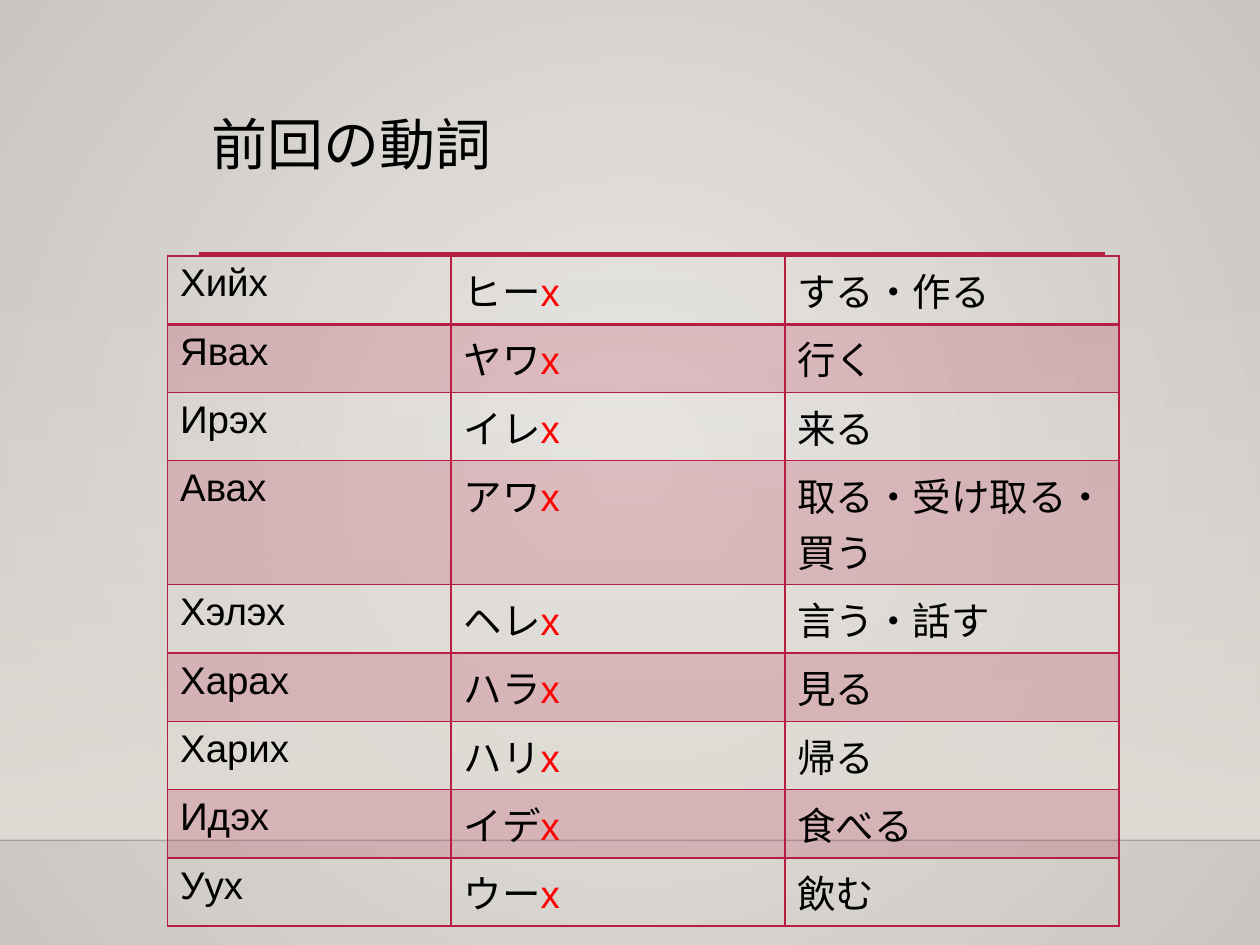
import pptx
import pptx.dml.color
import pptx.enum.shapes
import pptx.enum.text
import pptx.oxml
import pptx.oxml.ns
import pptx.util
from pptx.util import Inches

COLORS = {
    "center": "EBE9E6",
    "edge": "C9C5C0",
    "wall": "DFDBD5",
    "floor": "000001",
    "accent": "B71E42",
    "text": "000000",
    "ending": "FF0000",
}
NS = pptx.oxml.ns.nsdecls("a")


def rgb(name):
    return pptx.dml.color.RGBColor.from_string(COLORS[name])


def write(text, paragraph, font="Arial", size=22, color="text"):
    run = paragraph.add_run()
    run.text = text
    run.font.name = font
    run.font.size = pptx.util.Pt(size)
    run.font.color.rgb = rgb(color)


deck = pptx.Presentation()
deck.slide_width, deck.slide_height = Inches(10), Inches(7.5)
slide = deck.slides.add_slide(deck.slide_layouts[5])

backdrop = slide.background.fill
backdrop.gradient()
for stop, color in zip(backdrop.gradient_stops, ("center", "edge")):
    stop.color.rgb = rgb(color)
gradient = slide.background._cSld.find(".//" + pptx.oxml.ns.qn("a:gradFill"))
gradient.replace(
    gradient.find(pptx.oxml.ns.qn("a:lin")),
    pptx.oxml.parse_xml(
        f'<a:path {NS} path="circle">'
        '<a:fillToRect l="50000" t="50000" r="50000" b="50000"/></a:path>'
    ),
)

wall = slide.shapes.add_shape(
    pptx.enum.shapes.MSO_SHAPE.RECTANGLE, 0, Inches(2.2), Inches(10), Inches(4.46)
)
wall.shadow.inherit = False
wall.line.fill.background()
wall.fill.gradient()
wall.fill.gradient_angle = 270
for stop, alpha in zip(wall.fill.gradient_stops, (0, 100000)):
    stop.color.rgb = rgb("wall")
wall_colors = list(wall._element.spPr.iter(pptx.oxml.ns.qn("a:srgbClr")))
wall_colors[0].append(pptx.oxml.parse_xml(f'<a:alpha {NS} val="0"/>'))

for left, right, top, color, width, alpha in (
    (0, 10, 6.67, "floor", 1, 20000),
    (1.58, 8.77, 2.02, "accent", 2.5, 100000),
):
    rule = slide.shapes.add_connector(
        pptx.enum.shapes.MSO_CONNECTOR.STRAIGHT,
        Inches(left), Inches(top), Inches(right), Inches(top),
    )
    rule.line.color.rgb = rgb(color)
    rule.line.width = pptx.util.Pt(width)
    rule_color = rule._element.spPr.find(".//" + pptx.oxml.ns.qn("a:srgbClr"))
    rule_color.append(pptx.oxml.parse_xml(f'<a:alpha {NS} val="{alpha}"/>'))
    rule._element.spPr.append(pptx.oxml.parse_xml(f"<a:effectLst {NS}/>"))

heading = slide.shapes.title
heading.left, heading.top = Inches(1.58), Inches(0.88)
heading.width, heading.height = Inches(7.19), Inches(1.15)
heading.text_frame.word_wrap = True
heading.text_frame.auto_size = pptx.enum.text.MSO_AUTO_SIZE.NONE
heading.text_frame.vertical_anchor = pptx.enum.text.MSO_ANCHOR.TOP
heading_line = heading.text_frame.paragraphs[0]
heading_line.alignment = pptx.enum.text.PP_ALIGN.LEFT
heading_line.line_spacing = 0.9
write("前回の動詞", heading_line, font="Calibri", size=32)

VERBS = [
    ("Хийх", "ヒー", "する・作る"),
    ("Явах", "ヤワ", "行く"),
    ("Ирэх", "イレ", "来る"),
    ("Авах", "アワ", "取る・受け取る・買う"),
    ("Хэлэх", "ヘレ", "言う・話す"),
    ("Харах", "ハラ", "見る"),
    ("Харих", "ハリ", "帰る"),
    ("Идэх", "イデ", "食べる"),
    ("Уух", "ウー", "飲む"),
]
verb_table = slide.shapes.add_table(
    len(VERBS), 3, Inches(1.33), Inches(2.03), Inches(7.56), Inches(4.59)
).table
verb_table.first_row = False
verb_table.horz_banding = False
for column, width in zip(verb_table.columns, (2.25, 2.65, 2.65)):
    column.width = Inches(width)

for row, verb in enumerate(VERBS):
    verb_table.rows[row].height = Inches(0.83 if row == 3 else 0.47)
    for col, word in enumerate(verb):
        cell = verb_table.cell(row, col)
        line = cell.text_frame.paragraphs[0]
        write(word, line)
        if col == 1:
            write("х", line, color="ending")

        if row % 2:
            cell.fill.solid()
            cell.fill.fore_color.rgb = rgb("accent")
            tint = cell._tc.tcPr.find(".//" + pptx.oxml.ns.qn("a:srgbClr"))
            tint.append(pptx.oxml.parse_xml(f'<a:alpha {NS} val="20000"/>'))
        else:
            cell.fill.background()

        for position, side in enumerate("LRTB"):
            under_first_row = (row, side) in ((0, "B"), (1, "T"))
            border_width = pptx.util.Pt(2 if under_first_row else 1)
            cell._tc.tcPr.insert(position, pptx.oxml.parse_xml(
                f'<a:ln{side} {NS} w="{border_width}"><a:solidFill>'
                f'<a:srgbClr val="{COLORS["accent"]}"/></a:solidFill></a:ln{side}>'
            ))

deck.save("out.pptx")
